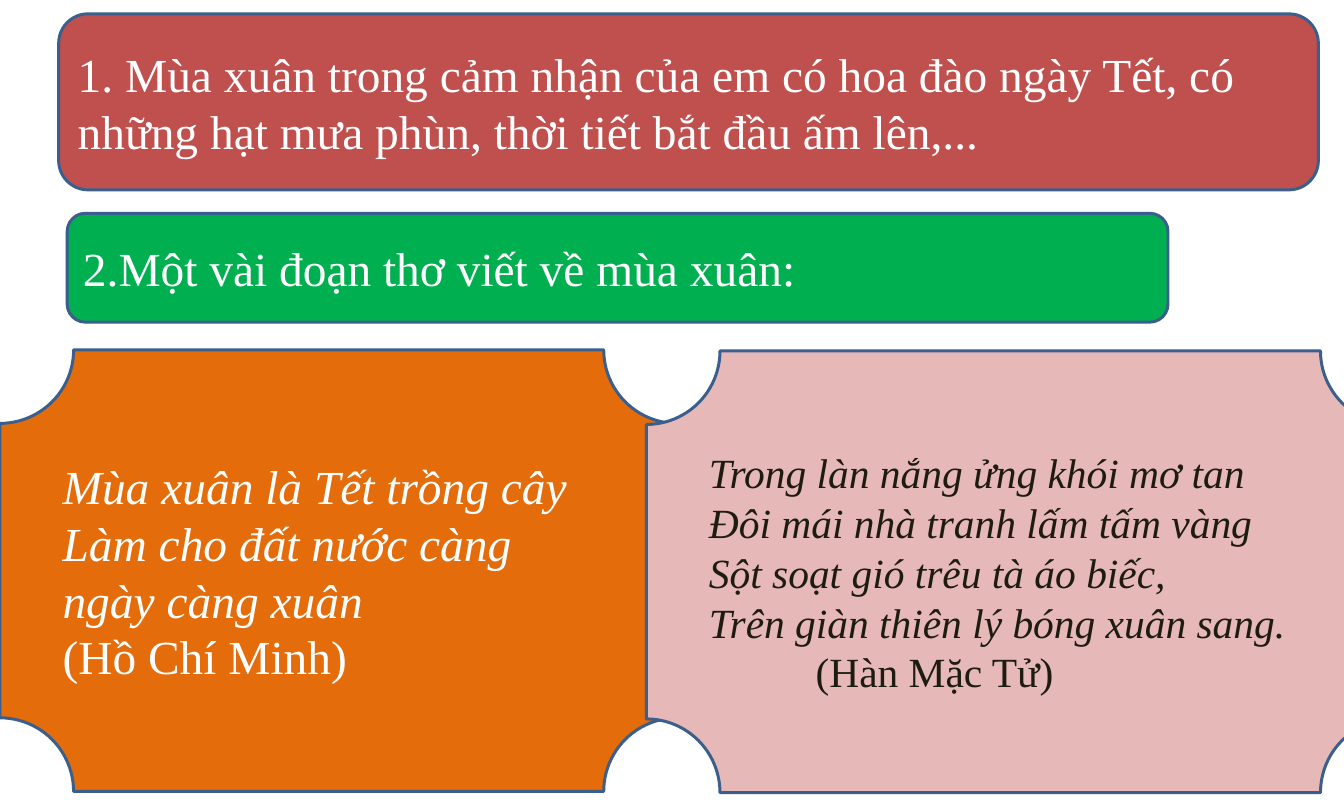
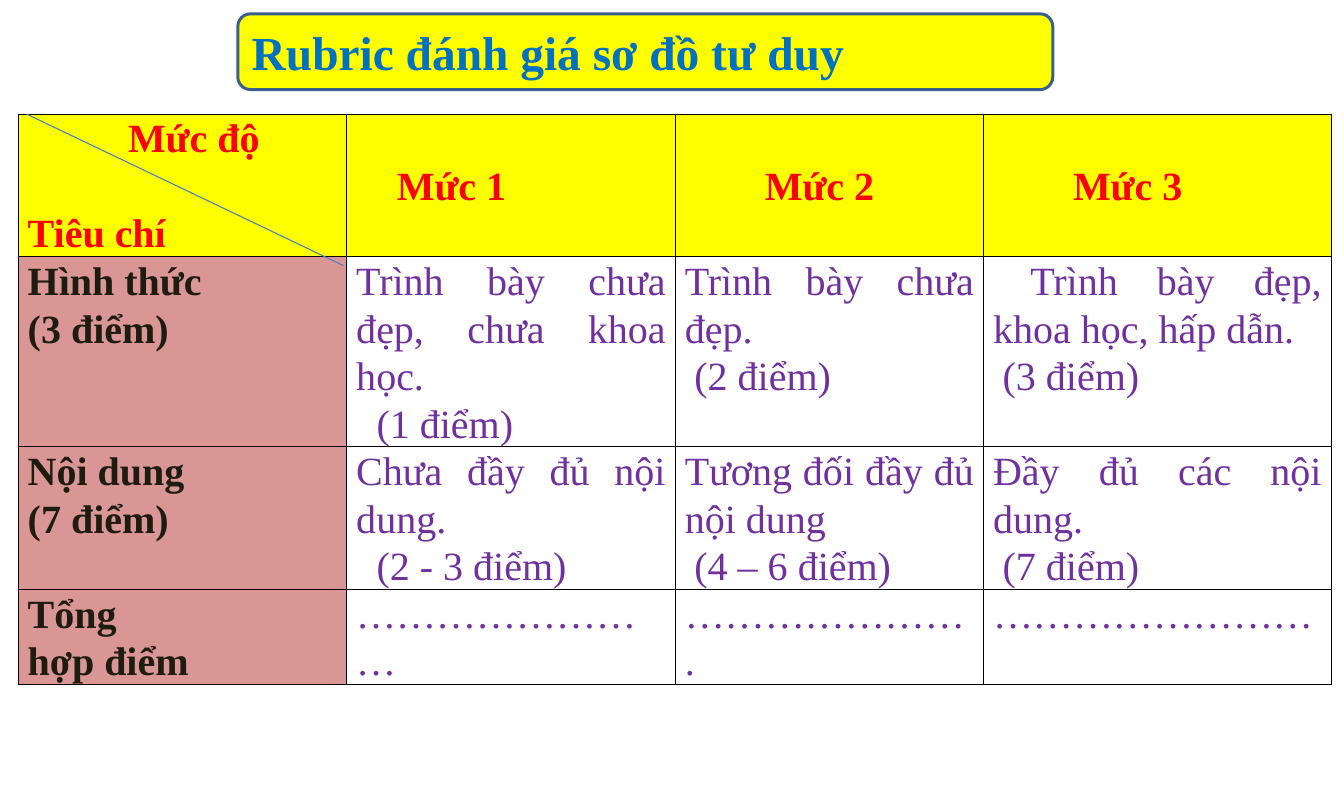
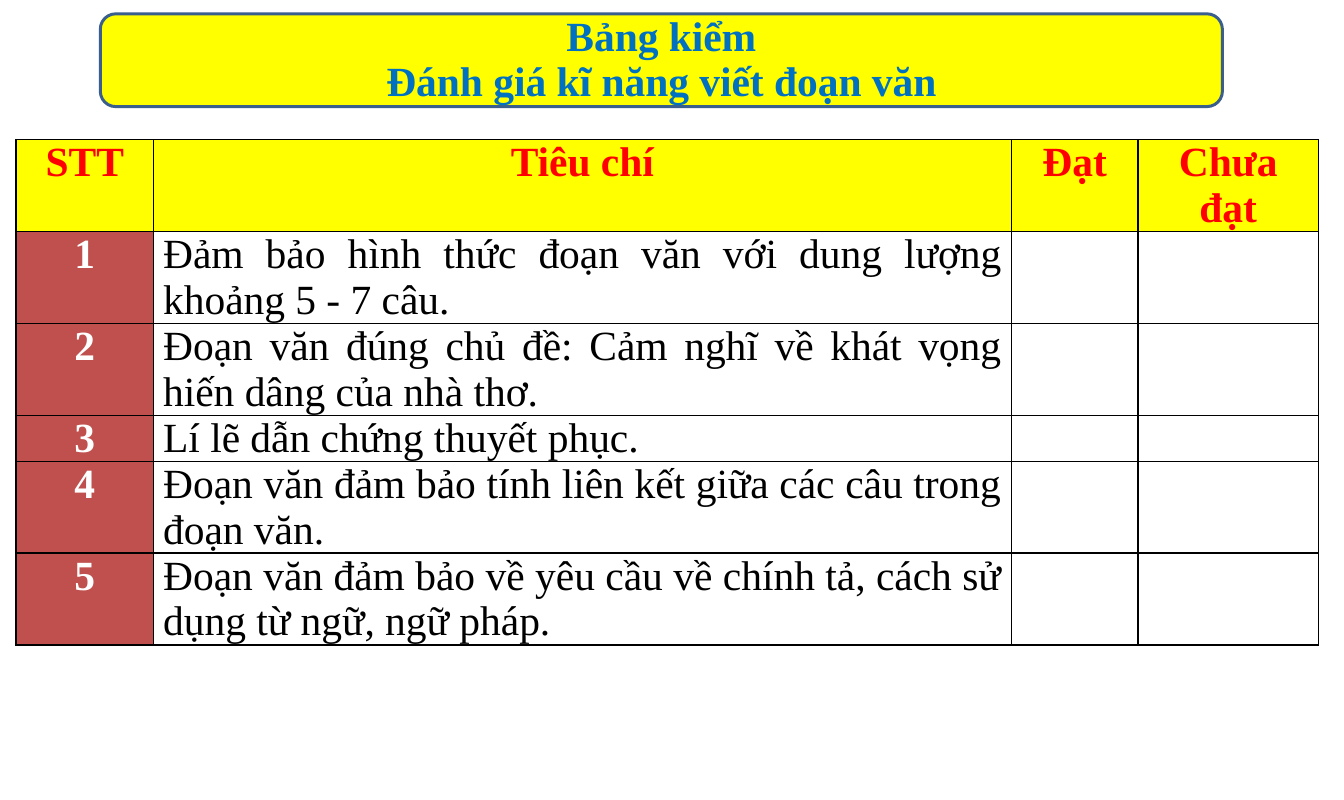
from dataclasses import dataclass

from lxml import etree
from pptx import Presentation, util as u
from pptx.dml.color import RGBColor
from pptx.enum import shapes, text
from pptx.oxml import ns, xmlchemy

PX = 9144  # one px is a hundredth of an inch


@dataclass(frozen=True)
class Theme:
    font: str = "Times New Roman"
    large: int = 32
    medium: int = 28
    small: int = 27
    white: str = "FFFFFF"
    black: str = "000000"
    dark: str = "1E1C11"
    red: str = "C0504D"
    green: str = "00B050"
    orange: str = "E46C0A"
    pink: str = "E6B9B8"
    rose: str = "D99694"
    yellow: str = "FFFF00"
    blue: str = "0070C0"
    purple: str = "7030A0"
    heading: str = "FF0000"
    outline: str = "3A5F8C"
    diagonal: str = "4B7EBC"


THEME = Theme()
ALIGN = text.PP_ALIGN
SHAPE = shapes.MSO_SHAPE

# Content: a paragraph is (text, format that differs from its block)
ITALIC = {"italic": True}
SPRING_PANELS = [
    dict(box=(55, 13, 1181, 165), kind=SHAPE.ROUNDED_RECTANGLE, fill=THEME.red,
         lines=[("1. Mùa xuân trong cảm nhận của em có hoa đào ngày Tết, có những hạt "
                 "mưa phùn, thời tiết bắt đầu ấm lên,...", {})]),
    dict(box=(63, 200, 1032, 102), kind=SHAPE.ROUNDED_RECTANGLE, fill=THEME.green,
         lines=[("2.Một vài đoạn thơ viết về mùa xuân:", {})]),
    dict(box=(0, 328, 635, 414), kind=SHAPE.PLAQUE, fill=THEME.orange,
         lines=[("Mùa xuân là Tết trồng cây", ITALIC),
                ("Làm cho đất nước càng ngày càng xuân", ITALIC),
                ("(Hồ Chí Minh)", {})]),
    dict(box=(606, 329, 701, 414), kind=SHAPE.PLAQUE, fill=THEME.pink,
         size=THEME.medium, color=THEME.dark,
         lines=[("Trong làn nắng ửng khói mơ tan", ITALIC),
                ("Đôi mái nhà tranh lấm tấm vàng", ITALIC),
                ("Sột soạt gió trêu tà áo biếc,", ITALIC),
                ("Trên giàn thiên lý bóng xuân sang.", ITALIC),
                ("(Hàn Mặc Tử)", {"left": 100})]),
]

RUBRIC_TITLE = [("Rubric đánh giá sơ đồ tư duy", {})]
RUBRIC_COLUMNS = [308, 308, 289, 326]
RUBRIC_ROWS = [133, 178, 133, 89]
RUBRIC = [
    [[("Mức độ", {"left": 94}), ("Tiêu chí", {"before": 32})],
     [("Mức 1", {"left": 38})], [("Mức 2", {"left": 75})], [("Mức 3", {"left": 75})]],
    [[("Hình thức", {}), ("(3 điểm)", {})],
     [("Trình bày chưa đẹp, chưa khoa học.", {}), ("(1 điểm)", {"left": 19})],
     [("Trình bày chưa đẹp.", {}), ("(2 điểm)", {"left": 9})],
     [("Trình bày đẹp, khoa học, hấp dẫn.", {"first": 35}), ("(3 điểm)", {"left": 9})]],
    [[("Nội dung", {}), ("(7 điểm)", {})],
     [("Chưa đầy đủ nội dung.", {}), ("(2 - 3 điểm)", {"left": 19})],
     [("Tương đối đầy đủ nội dung", {}), ("(4 – 6 điểm)", {"left": 9})],
     [("Đầy đủ các nội dung.", {}), ("(7 điểm)", {"left": 9})]],
    [[("Tổng", {}), ("hợp điểm", {})],
     [("……………………", {})], [("………………….", {})], [("……………………", {})]],
]

CHECKLIST_TITLE = [("Bảng kiểm", {}), ("Đánh giá kĩ năng viết đoạn văn", {})]
CHECKLIST_COLUMNS = [129, 804, 119, 169]
CHECKLIST_ROWS = [86, 86, 86, 43, 86, 86]
CHECKLIST_HEADS = ["STT", "Tiêu chí", "Đạt", "Chưa đạt"]
CRITERIA = [
    "Đảm bảo hình thức đoạn văn với dung lượng khoảng 5 - 7 câu.",
    "Đoạn văn đúng chủ đề: Cảm nghĩ về khát vọng hiến dâng của nhà thơ.",
    "Lí lẽ dẫn chứng thuyết phục.",
    "Đoạn văn đảm bảo tính liên kết giữa các câu trong đoạn văn.",
    "Đoạn văn đảm bảo về yêu cầu về chính tả, cách sử dụng từ ngữ, ngữ pháp.",
]


def color_of(value):
    return RGBColor.from_string(value)


def write(paragraph, words, *, size=THEME.large, color=THEME.white, bold=False,
          italic=False, align=ALIGN.LEFT, spacing=1.0, before=0, left=0, first=0):
    """Put one formatted run into a paragraph."""
    paragraph.alignment = align
    paragraph.line_spacing = spacing
    paragraph.space_before = u.Pt(before)
    properties = paragraph._p.get_or_add_pPr()
    properties.set("marL", str(left * PX))
    properties.set("indent", str(first * PX))
    run = paragraph.add_run()
    run.text = words
    font = run.font
    font.name, font.size = THEME.font, u.Pt(size)
    font.bold, font.italic = bold, italic
    font.color.rgb = color_of(color)


def write_lines(frame, lines, **shared):
    for index, (words, own) in enumerate(lines):
        paragraph = frame.add_paragraph() if index else frame.paragraphs[0]
        write(paragraph, words, **{**shared, **own})


def fill_frame(frame, lines, **form):
    """Middle-anchored, wrapped text at a fixed size."""
    frame.word_wrap = True
    frame.auto_size = text.MSO_AUTO_SIZE.NONE
    frame.vertical_anchor = text.MSO_ANCHOR.MIDDLE
    write_lines(frame, lines, **form)


def add_panel(slide, box, kind, fill, lines=(), **form):
    shape = slide.shapes.add_shape(kind, *(value * PX for value in box))
    shape.fill.solid()
    shape.fill.fore_color.rgb = color_of(fill)
    shape.line.color.rgb = color_of(THEME.outline)
    shape.line.width = u.Pt(2)
    shape.shadow.inherit = False
    fill_frame(shape.text_frame, lines, **form)


def add_titled_slide(presentation, box, lines, **form):
    """Title-only slide with its title over a rounded yellow band."""
    slide = presentation.slides.add_slide(presentation.slide_layouts[5])
    add_panel(slide, box, SHAPE.ROUNDED_RECTANGLE, THEME.yellow)
    title = slide.shapes.title
    title.left, title.top, title.width, title.height = (value * PX for value in box)
    # Bring the title in front of the band
    slide.shapes._spTree.append(title._element)
    frame = title.text_frame
    frame.margin_left = frame.margin_right = 13 * PX
    frame.margin_top = frame.margin_bottom = 0
    fill_frame(frame, lines, color=THEME.blue, bold=True, **form)
    return slide


def add_borders(cell):
    properties = cell._tc.get_or_add_tcPr()
    for index, side in enumerate(("lnL", "lnR", "lnT", "lnB")):
        line = xmlchemy.OxmlElement(f"a:{side}")
        line.set("w", str(u.Pt(1)))
        fill = etree.SubElement(line, ns.qn("a:solidFill"))
        etree.SubElement(fill, ns.qn("a:srgbClr")).set("val", THEME.black)
        properties.insert(index, line)


def add_grid(slide, left, top, columns, heights, rows, cell_style):
    """Table; cell_style(row, column) gives the fill, anchor and text format."""
    frame = slide.shapes.add_table(len(rows), len(columns), left * PX, top * PX,
                                   sum(columns) * PX, sum(heights) * PX)
    table = frame.table
    table.horz_banding = table.first_row = False
    for column, width in zip(table.columns, columns):
        column.width = width * PX
    for row, height in zip(table.rows, heights):
        row.height = height * PX
    for r, row in enumerate(rows):
        for c, lines in enumerate(row):
            cell = table.cell(r, c)
            fill, anchor, form = cell_style(r, c)
            cell.margin_left = cell.margin_right = 9 * PX
            cell.margin_top = cell.margin_bottom = 0
            cell.vertical_anchor = anchor
            cell.fill.solid()
            cell.fill.fore_color.rgb = color_of(fill)
            add_borders(cell)
            write_lines(cell.text_frame, lines, **form)


def rubric_style(row, column):
    form = dict(size=THEME.small, spacing=1.07, bold=row == 0 or column == 0)
    top = text.MSO_ANCHOR.TOP
    if row == 0:
        anchor = text.MSO_ANCHOR.MIDDLE if column else top
        return THEME.yellow, anchor, dict(form, color=THEME.heading)
    form["align"] = ALIGN.JUSTIFY
    if column == 0:
        return THEME.rose, top, dict(form, color=THEME.dark)
    return THEME.white, top, dict(form, color=THEME.purple)


def checklist_style(row, column):
    form = dict(size=THEME.medium, bold=True, align=ALIGN.CENTER)
    top = text.MSO_ANCHOR.TOP
    if row == 0:
        return THEME.yellow, top, dict(form, color=THEME.heading)
    if column == 0:
        return THEME.red, top, form
    return THEME.white, top, dict(form, color=THEME.black, bold=False, align=ALIGN.JUSTIFY)


def build_spring(presentation):
    slide = presentation.slides.add_slide(presentation.slide_layouts[6])
    for panel in SPRING_PANELS:
        add_panel(slide, **panel)


def build_rubric(presentation):
    slide = add_titled_slide(presentation, (223, 13, 764, 71), RUBRIC_TITLE)
    add_grid(slide, 17, 107, RUBRIC_COLUMNS, RUBRIC_ROWS, RUBRIC, rubric_style)
    # Diagonal of the corner cell
    diagonal = slide.shapes.add_connector(
        shapes.MSO_CONNECTOR.STRAIGHT, 25 * PX, 107 * PX, 322 * PX, 249 * PX)
    diagonal.line.color.rgb = color_of(THEME.diagonal)
    diagonal.line.width = u.Pt(0.75)
    etree.SubElement(diagonal._element.spPr, ns.qn("a:effectLst"))


def build_checklist(presentation):
    # Tight line spacing keeps both title lines inside the band
    slide = add_titled_slide(presentation, (94, 13, 1052, 87), CHECKLIST_TITLE,
                             size=THEME.medium, align=ALIGN.CENTER, spacing=0.9)
    rows = [[[(head, {})] for head in CHECKLIST_HEADS]]
    for number, criterion in enumerate(CRITERIA, 1):
        rows.append([[(str(number), {})], [(criterion, {})], [], []])
    add_grid(slide, 15, 131, CHECKLIST_COLUMNS, CHECKLIST_ROWS, rows, checklist_style)


def main():
    presentation = Presentation()
    presentation.slide_width, presentation.slide_height = 1260 * PX, 750 * PX
    build_spring(presentation)
    build_rubric(presentation)
    build_checklist(presentation)
    presentation.save("out.pptx")


if __name__ == "__main__":
    main()
